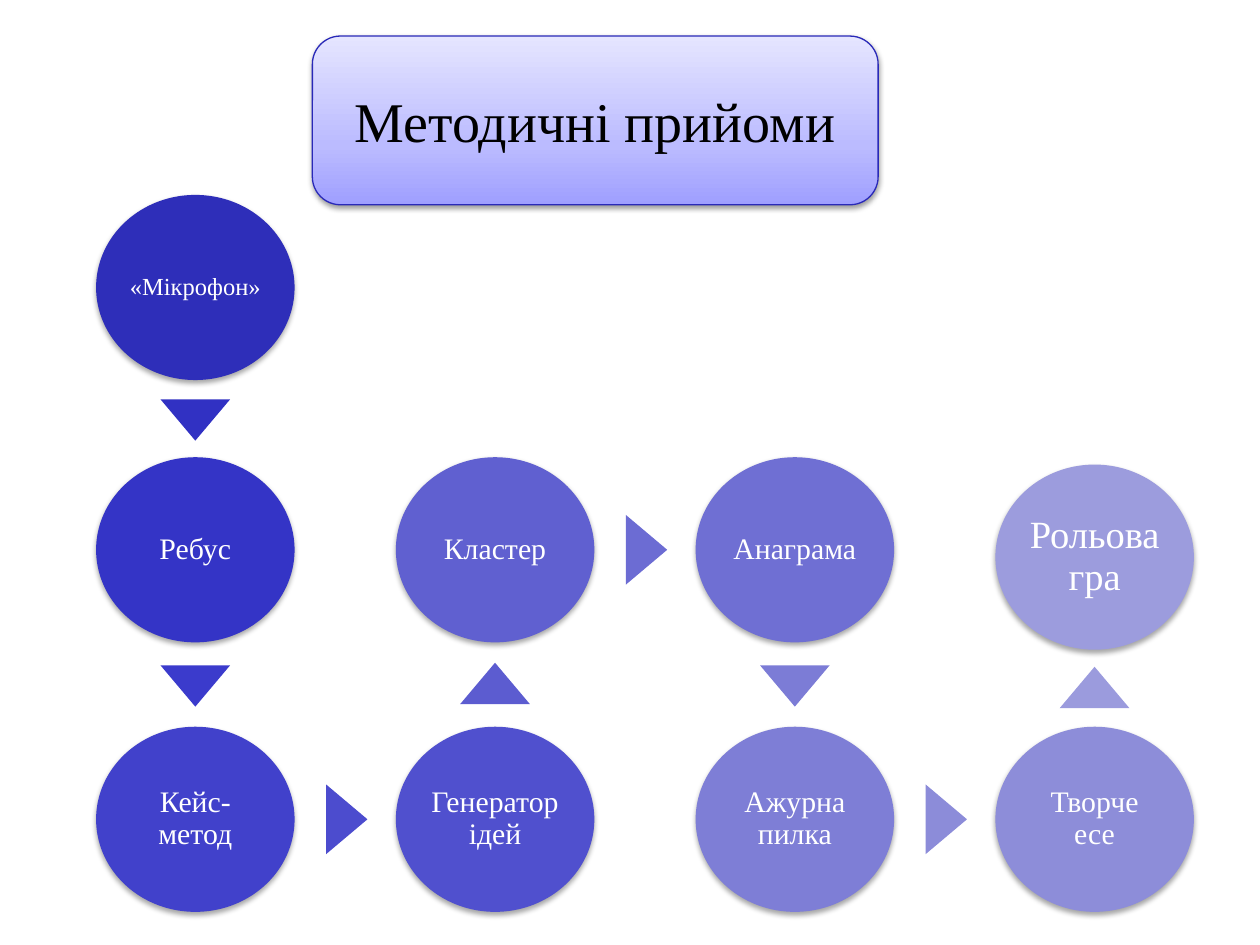
from lxml import etree
from pptx import Presentation
from pptx.dml.color import RGBColor
from pptx.enum.shapes import MSO_SHAPE
from pptx.enum.text import MSO_ANCHOR, PP_ALIGN
from pptx.oxml import parse_xml
from pptx.oxml.ns import nsdecls
from pptx.util import Pt


def add_text(sp, text, size, color, inset=None, spacing=None):
    tf = sp.text_frame
    tf.word_wrap = True
    tf.vertical_anchor = MSO_ANCHOR.MIDDLE
    if inset is not None:
        tf.margin_left = tf.margin_right = Pt(inset)
        tf.margin_top = tf.margin_bottom = Pt(inset)
    p = tf.paragraphs[0]
    p.alignment = PP_ALIGN.CENTER
    p.line_spacing = spacing
    r = p.add_run()
    r.text = text
    r.font.size = Pt(size)
    r.font.name = "Times New Roman"
    r.font.color.rgb = RGBColor.from_string(color)


def add_shadow(sp, dist, alpha):
    sp.shadow.inherit = False
    effects = sp._element.spPr.find("{*}effectLst")
    effects.append(parse_xml(
        f'<a:outerShdw {nsdecls("a")} blurRad="{Pt(3.1)}" dist="{Pt(dist)}" '
        f'dir="5400000" rotWithShape="0"><a:srgbClr val="000000">'
        f'<a:alpha val="{alpha}000"/></a:srgbClr></a:outerShdw>'))


prs = Presentation()
prs.slide_width, prs.slide_height = Pt(720), Pt(540)
s = prs.slides.add_slide(prs.slide_layouts[6])

# Grid of circles and the arrows between them
LEFT, PITCH = 54.9, 171.3
CIRCLE_W, CIRCLE_H = 113.4, 105.8
ARROW_W, ARROW_H = 39.8, 23.6
TOP, MIDDLE, BOTTOM = 111.4, 261.3, 415.3
DOWN, RIGHT, UP = 180, 90, 0

# text, size, column, top, fill, then arrow direction, centre y, fill
steps = [
    ("«Мікрофон»", 14, 0, TOP, "2E2EB9", (DOWN, 240, "3131C3")),
    ("Ребус", 17, 0, MIDDLE, "3434C6", (DOWN, 392, "3B3BCC")),
    ("Кейс-метод", 17, 0, BOTTOM, "4141CB", (RIGHT, 468.2, "4C4CCE")),
    ("Генератор ідей", 17, 1, BOTTOM, "5050CE", (UP, 390.5, "5C5CD0")),
    ("Кластер", 17, 1, MIDDLE, "6060D0", (RIGHT, 314.2, "6C6CD3")),
    ("Анаграма", 17, 2, MIDDLE, "6F6FD3", (DOWN, 392, "7C7CD6")),
    ("Ажурна пилка", 17, 2, BOTTOM, "7E7ED6", (RIGHT, 468.2, "8C8CD9")),
    ("Творче есе", 17, 3, BOTTOM, "8D8DD9", (UP, 392.8, "9B9BDD")),
    ("Рольова гра", 22, 3, 265.5, "9C9CDD", None),
]

for text, size, col, top, fill, arrow in steps:
    left = LEFT + col * PITCH
    sp = s.shapes.add_shape(MSO_SHAPE.OVAL, Pt(left), Pt(top),
                            Pt(CIRCLE_W), Pt(CIRCLE_H))
    sp.fill.solid()
    sp.fill.fore_color.rgb = RGBColor.from_string(fill)
    sp.line.fill.background()
    add_shadow(sp, 1.8, 35)
    add_text(sp, text, size, "FFFFFF", inset=size / 10, spacing=0.9)

    if arrow:
        direction, center_y, arrow_fill = arrow
        center_x = left + CIRCLE_W / 2 + (PITCH / 2 + 0.9 if direction == RIGHT else 0)
        sp = s.shapes.add_shape(MSO_SHAPE.ISOSCELES_TRIANGLE,
                                Pt(center_x - ARROW_W / 2), Pt(center_y - ARROW_H / 2),
                                Pt(ARROW_W), Pt(ARROW_H))
        sp.rotation = direction
        sp.fill.solid()
        sp.fill.fore_color.rgb = RGBColor.from_string(arrow_fill)
        sp.line.fill.background()
        sp.shadow.inherit = False

# Title plate
sp = s.shapes.add_shape(MSO_SHAPE.FLOWCHART_ALTERNATE_PROCESS,
                        Pt(178.5), Pt(20.6), Pt(323.3), Pt(96.4))
sp.fill.gradient()
grad = sp._element.spPr.find("{*}gradFill")
stops = grad.find("{*}gsLst")
for stop in list(stops):
    stops.remove(stop)
for pos, color in ((0, "9F9FFF"), (35, "BBBBFF"), (100, "E5E5FF")):
    stops.append(parse_xml(f'<a:gs {nsdecls("a")} pos="{pos}000">'
                           f'<a:srgbClr val="{color}"/></a:gs>'))
lin = grad.find("{*}lin")
if lin is None:
    lin = etree.SubElement(grad, stops.tag.replace("gsLst", "lin"))
lin.set("ang", "16200000")
sp.line.color.rgb = RGBColor.from_string("2929B8")
sp.line.width = Pt(0.75)
add_shadow(sp, 1.6, 38)
add_text(sp, "Методичні прийоми", 32, "000000")

prs.save("out.pptx")
